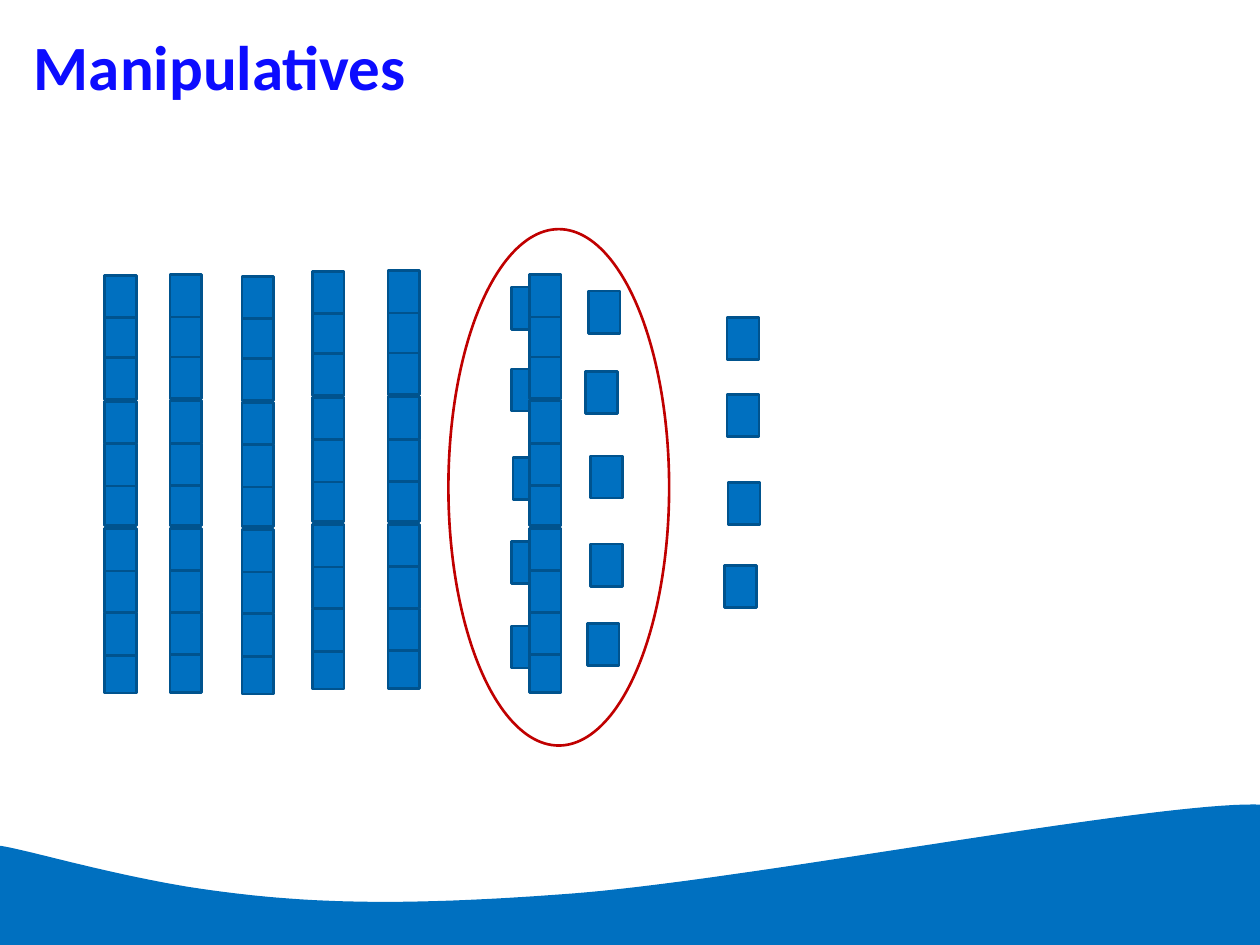
from dataclasses import dataclass

from pptx import Presentation
from pptx.dml.color import RGBColor
from pptx.enum.shapes import MSO_SHAPE as Preset
from pptx.enum.text import MSO_ANCHOR as Anchor, PP_ALIGN as Align
from pptx.util import Cm, Pt

COLORS = {"title": "0C0CFF", "block": "0070C0", "edge": "00538E", "ring": "C00000"}
BLOCK_WIDTH, BLOCK_HEIGHT = 0.64, 0.85
ROD_STEPS = [0, 0.81, 1.65, 2.54, 3.4, 4.2, 5.11, 5.95, 6.81, 7.57]


@dataclass
class Spot:
    left: float
    top: float


TEN_RODS = [Spot(2.11, 5.55), Spot(3.43, 5.54), Spot(4.88, 5.57),
            Spot(6.3, 5.47), Spot(7.82, 5.46)]
TRADED_ROD = Spot(10.67, 5.54)
LOOSE_ONES = [Spot(14.66, 6.4), Spot(14.66, 7.95), Spot(14.68, 9.73), Spot(14.61, 11.4)]
CIRCLED_ONES = [
    Spot(10.31, 5.79), Spot(10.31, 7.44), Spot(10.34, 9.22), Spot(10.31, 10.92),
    Spot(10.31, 12.62), Spot(11.86, 5.87), Spot(11.81, 7.49), Spot(11.91, 9.19),
    Spot(11.91, 10.97), Spot(11.84, 12.57),
]
WAVE_START = (25.6, 16.23)
WAVE_CURVES = [
    ((23.77, 16.05), (15.19, 17.73), (11.56, 18.01)),
    ((7.92, 18.29), (5.94, 18.21), (3.81, 17.88)),
    ((1.68, 17.53), (-0.2, 16.89), (-0.2, 17.07)),
]


def color(name: str) -> RGBColor:
    return RGBColor.from_string(COLORS[name])


def write_text(box, text: str, *, size: float, ink: str, bold: bool = False,
               font: str = "Calibri", align=Align.LEFT, anchor=Anchor.MIDDLE) -> None:
    frame = box.text_frame
    frame.word_wrap = True
    frame.vertical_anchor = anchor
    para = frame.paragraphs[0]
    para.alignment = align
    span = para.add_run()
    span.text = text
    span.font.name, span.font.size, span.font.bold = font, Pt(size), bold
    span.font.color.rgb = color(ink)


def draw_block(shapes, spot: Spot) -> None:
    block = shapes.add_shape(Preset.RECTANGLE, Cm(spot.left), Cm(spot.top),
                             Cm(BLOCK_WIDTH), Cm(BLOCK_HEIGHT))
    block.shadow.inherit = False
    block.fill.solid()
    block.fill.fore_color.rgb = color("block")
    block.line.color.rgb = color("edge")
    block.line.width = Pt(1.5)


def draw_rod(shapes, spot: Spot) -> None:
    rod = shapes.add_group_shape()
    for step in reversed(ROD_STEPS):
        draw_block(rod.shapes, Spot(spot.left, spot.top + step))


def draw_circled_ones(shapes) -> None:
    group = shapes.add_group_shape()
    for spot in CIRCLED_ONES:
        draw_block(group.shapes, spot)
    ring = group.shapes.add_shape(Preset.OVAL, Cm(9.04), Cm(4.62), Cm(4.45), Cm(10.41))
    ring.shadow.inherit = False
    ring.fill.background()
    ring.line.color.rgb = color("ring")
    ring.line.width = Pt(1.5)


def curve_points(start: tuple, curve: tuple, count: int = 40) -> list[tuple]:
    points = []
    for index in range(1, count + 1):
        t = index / count
        weights = ((1 - t) ** 3, 3 * t * (1 - t) ** 2, 3 * t * t * (1 - t), t ** 3)
        corners = (start, *curve)
        points.append(tuple(int(Cm(sum(w * corner[axis] for w, corner in zip(weights, corners))))
                            for axis in (0, 1)))
    return points


def draw_wave(shapes) -> None:
    points, start = [], WAVE_START
    for curve in WAVE_CURVES:
        points += curve_points(start, curve)
        start = curve[-1]
    points += [(Cm(-0.2), Cm(19.1)), (Cm(25.6), Cm(19.18))]
    builder = shapes.build_freeform(Cm(WAVE_START[0]), Cm(WAVE_START[1]))
    builder.add_line_segments(points, close=True)
    wave = builder.convert_to_shape()
    wave.shadow.inherit = False
    wave.fill.solid()
    wave.fill.fore_color.rgb = color("block")
    wave.line.fill.background()
    shapes.title.element.addprevious(wave.element)


def main() -> None:
    deck = Presentation()
    deck.slide_width, deck.slide_height = Cm(25.4), Cm(19.05)
    page = deck.slides.add_slide(deck.slide_layouts[5])
    shapes = page.shapes
    draw_wave(shapes)
    title = shapes.title
    title.left, title.top, title.width, title.height = Cm(0.43), Cm(0.43), Cm(22.86), Cm(1.78)
    write_text(title, "Manipulatives", size=36, ink="title", bold=True)
    for spot in TEN_RODS:
        draw_rod(shapes, spot)
    for spot in LOOSE_ONES:
        draw_block(shapes, spot)
    draw_circled_ones(shapes)
    draw_rod(shapes, TRADED_ROD)
    deck.save("out.pptx")


if __name__ == "__main__":
    main()
